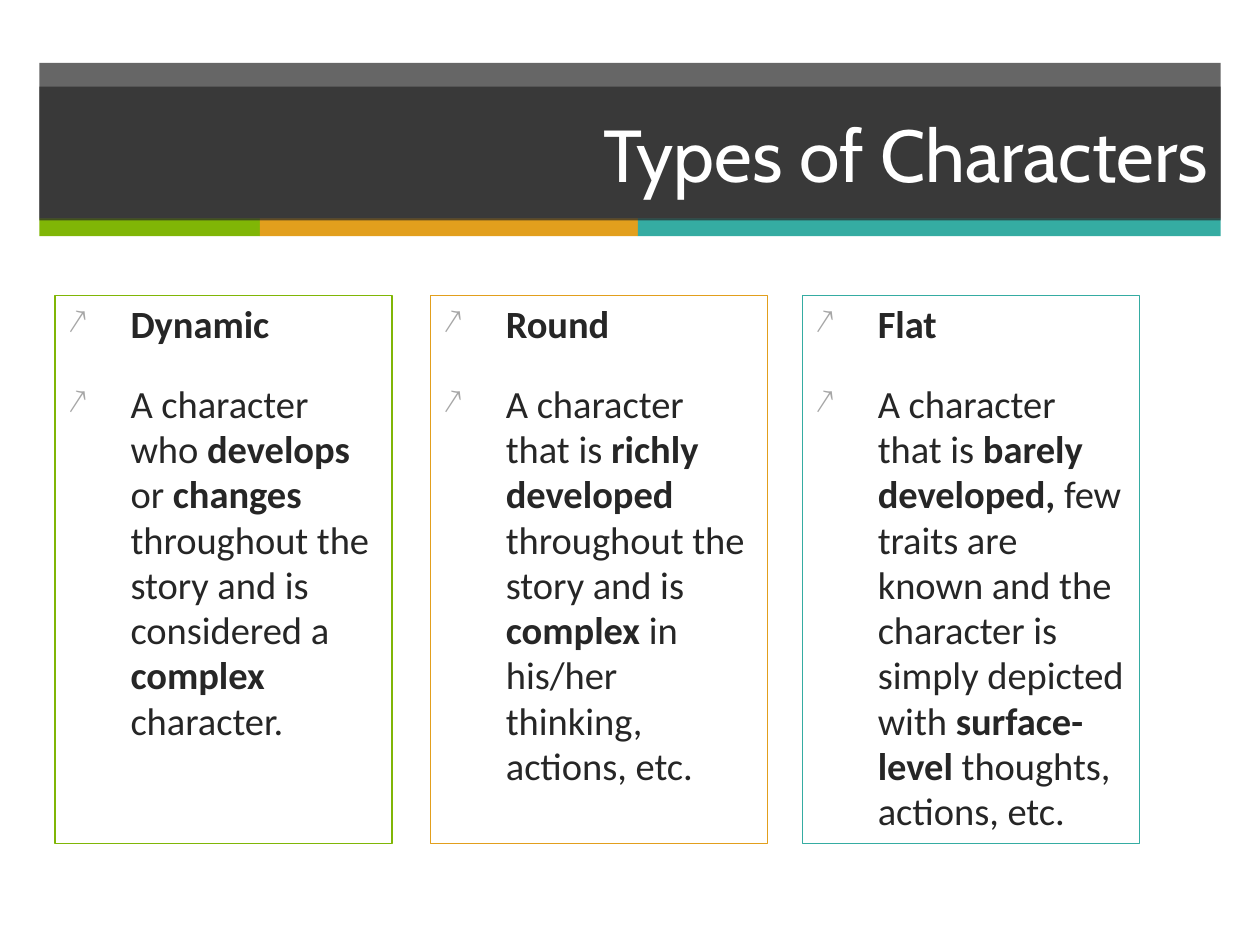
from pptx import Presentation
from pptx.dml.color import RGBColor as RGB
from pptx.enum.shapes import MSO_SHAPE as Form
from pptx.enum.text import MSO_ANCHOR as Anchor, PP_ALIGN as Align
from pptx.oxml.ns import qn
from pptx.util import Pt
from lxml.etree import SubElement as Sub

DARK = RGB(0x26, 0x26, 0x26)
WHITE = RGB(0xFF, 0xFF, 0xFF)
GREEN = RGB(0x80, 0xB6, 0x06)
AMBER = RGB(0xE2, 0x9F, 0x1D)
TEAL = RGB(0x35, 0xAC, 0xA2)
GREY = RGB(0xA6, 0xA6, 0xA6)

# Each card: left, colour, heading, then (text, bold) runs
CARDS = [
    (31.5, GREEN, "Dynamic", [
        ("A character who ", False), ("develops ", True), ("or ", False),
        ("changes ", True),
        ("throughout the story and is considered a ", False),
        ("complex ", True), ("character.", False)]),
    (246, AMBER, "Round", [
        ("A character that is ", False), ("richly developed ", True),
        ("throughout the story and is ", False), ("complex ", True),
        ("in his/her thinking, actions, etc.", False)]),
    (458.5, TEAL, "Flat", [
        ("A character that is", False), (" barely developed, ", True),
        ("few traits are known and the character is simply depicted with ",
         False),
        ("surface-level ", True), ("thoughts, actions, etc.", False)]),
]


def add_rect(slide, left, top, width, height, fill=None, alpha=None):
    """Add a plain rectangle without outline; alpha is in percent."""
    rect = slide.shapes.add_shape(
        Form.RECTANGLE, Pt(left), Pt(top), Pt(width), Pt(height))
    rect.shadow.inherit = False
    rect.line.fill.background()
    if fill is None:
        rect.fill.background()
    else:
        rect.fill.solid()
        rect.fill.fore_color.rgb = fill
    if alpha is not None:
        color = rect.fill._xPr.find(".//" + qn("a:srgbClr"))
        Sub(color, qn("a:alpha"), val=str(alpha * 1000))
    return rect


def add_header(slide, left, top, width, text):
    # Two see-through bands overlap to make the lighter top edge
    add_rect(slide, left, top, width, 89, DARK, 70)

    # Colour strip
    x = left
    for part, color in ((126, GREEN), (216, AMBER), (333, TEAL)):
        add_rect(slide, x, top + 88.8, part, 10.2, color)
        x += part

    # Title
    title = add_rect(slide, left, top + 13.5, width, 76.5, DARK, 70)
    frame = title.text_frame
    frame.word_wrap = True
    frame.vertical_anchor = Anchor.MIDDLE
    para = frame.paragraphs[0]
    para.text = text
    para.alignment = Align.RIGHT
    font = para.font
    font.name, font.size, font.color.rgb = "Cabin", Pt(42), WHITE


def set_bullet(para):
    props = para._p.get_or_add_pPr()
    props.set("marL", str(Pt(36)))
    props.set("indent", str(-Pt(36)))
    color = Sub(props, qn("a:buClr"))
    Sub(color, qn("a:srgbClr"), val=str(GREY))
    Sub(props, qn("a:buSzPct"), val="90000")
    Sub(props, qn("a:buChar"), char="↗")


def add_card(slide, left, top, width, height, color, head, body):
    card = add_rect(slide, left, top, width, height)
    card.line.color.rgb = color
    card.line.width = Pt(0.75)
    frame = card.text_frame
    frame.word_wrap = True
    frame.vertical_anchor = Anchor.TOP

    # Heading and description
    for i, runs in enumerate(([(head, True)], body)):
        para = frame.add_paragraph() if i else frame.paragraphs[0]
        para.alignment = Align.LEFT
        para.space_before = Pt(20)
        para.line_spacing = 0.98
        set_bullet(para)
        font = para.font
        font.name, font.size, font.color.rgb = "Calibri", Pt(22), DARK
        for text, bold in runs:
            run = para.add_run()
            run.text = text
            run.font.bold = bold


def main():
    prs = Presentation()
    prs.slide_width, prs.slide_height = Pt(720), Pt(540)
    slide = prs.slides.add_slide(prs.slide_layouts[6])
    add_header(slide, 22.5, 36, 675, "Types of Characters")
    for left, color, head, body in CARDS:
        add_card(slide, left, 169, 192.6, 313.2, color, head, body)
    prs.save("out.pptx")


if __name__ == "__main__":
    main()
